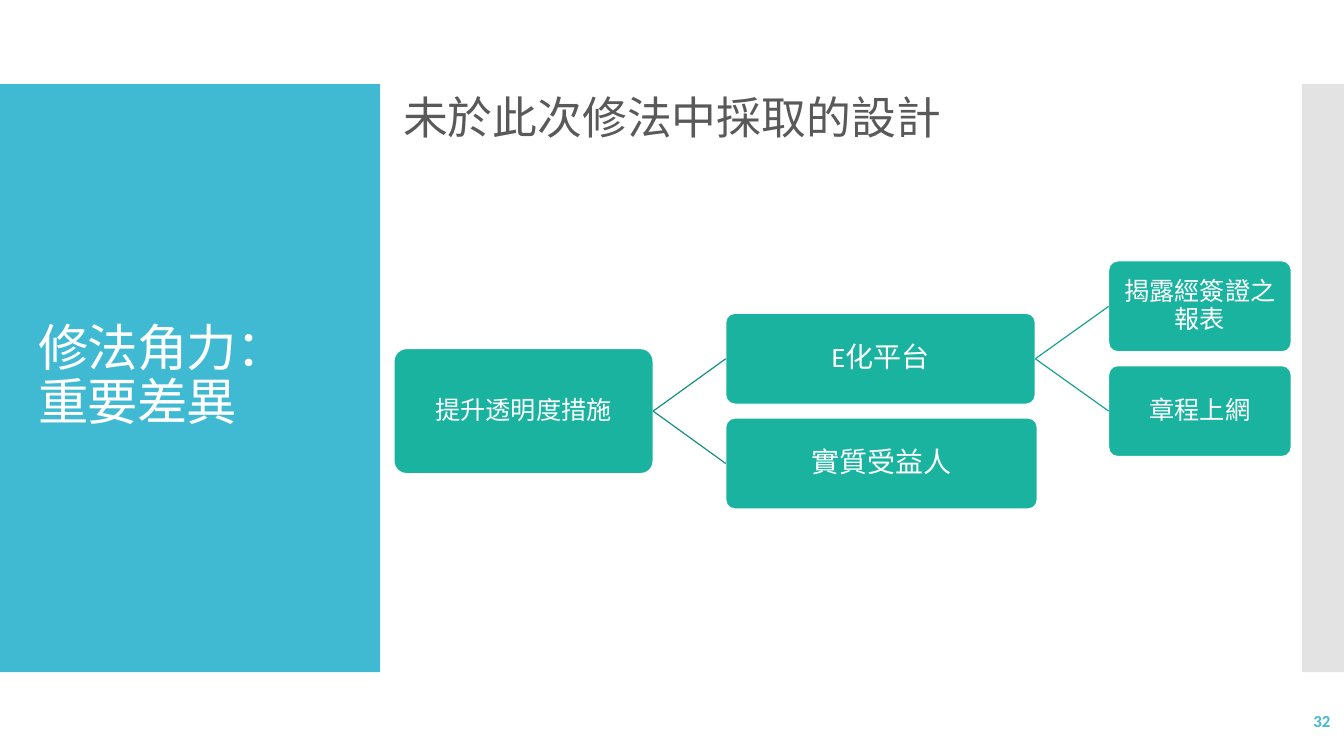
import pptx
import pptx.dml.color
import pptx.enum.shapes
import pptx.enum.text
import pptx.oxml.ns
import pptx.util
from lxml import etree

Cm, Pt = pptx.util.Cm, pptx.util.Pt
qn = pptx.oxml.ns.qn
SHAPE = pptx.enum.shapes.MSO_SHAPE
ALIGN = pptx.enum.text.PP_ALIGN
ANCHOR = pptx.enum.text.MSO_ANCHOR

COLORS = {
    "panel": "40BAD2",
    "strip": "C8C8C8",
    "node": "1AB39F",
    "root_link": "158F7F",
    "leaf_link": "18A290",
    "heading": "595959",
    "white": "FFFFFF",
}
ROW_MIDDLE = 10.36  # cm, centre line of the root node
ROW_PITCH = 2.64
NODE_HEIGHT = 2.29


def rgb(name):
    return pptx.dml.color.RGBColor.from_string(COLORS[name])


def write(sp, text, size, color="white", align=ALIGN.LEFT, bold=False,
          line_spacing=0.9, tracking=None, inset=None):
    """Fill a shape with one paragraph; \\v in the text breaks the line."""
    tf = sp.text_frame
    tf.word_wrap = True
    tf.vertical_anchor = ANCHOR.MIDDLE
    if inset is not None:
        tf.margin_left = tf.margin_right = Cm(inset)
        tf.margin_top = tf.margin_bottom = Cm(inset)
    p = tf.paragraphs[0]
    p.text = text
    p.alignment = align
    p.line_spacing = line_spacing
    for r in p.runs:
        r.font.name = "Calibri"
        r.font.size = Pt(size)
        r.font.bold = bold
        r.font.color.rgb = rgb(color)
        if tracking is not None:
            r.font._element.set("spc", str(tracking))


def add_text(s, x, y, w, h, text, size, **fmt):
    write(s.shapes.add_textbox(Cm(x), Cm(y), Cm(w), Cm(h)), text, size, **fmt)


def add_band(s, x, w, color, alpha=None):
    sp = s.shapes.add_shape(SHAPE.RECTANGLE, Cm(x), Cm(2.12), Cm(w), Cm(14.82))
    sp.shadow.inherit = False
    sp.fill.solid()
    sp.fill.fore_color.rgb = rgb(color)
    sp.line.fill.background()
    if alpha is not None:
        srgb = sp._element.spPr.find(qn("a:solidFill")).find(qn("a:srgbClr"))
        etree.SubElement(srgb, qn("a:alpha")).set("val", str(alpha * 1000))


def add_node(s, x, row, w, text, size, h=NODE_HEIGHT):
    """Add a rounded box centred on a row, counted in pitches from the root."""
    top = ROW_MIDDLE + row * ROW_PITCH - h / 2
    sp = s.shapes.add_shape(SHAPE.ROUNDED_RECTANGLE, Cm(x), Cm(top), Cm(w), Cm(h))
    sp.adjustments[0] = 0.1
    sp.shadow.inherit = False
    sp.fill.solid()
    sp.fill.fore_color.rgb = rgb("node")
    sp.line.color.rgb = rgb("white")
    sp.line.width = Pt(0.85)
    write(sp, text, size, align=ALIGN.CENTER, inset=0.03)
    return sp


def link(s, parent, child, color):
    cxn = s.shapes.add_connector(pptx.enum.shapes.MSO_CONNECTOR.STRAIGHT, 0, 0, 0, 0)
    cxn.begin_connect(parent, 3)
    cxn.end_connect(child, 1)
    cxn.line.color.rgb = rgb(color)
    cxn.line.width = Pt(0.85)
    etree.SubElement(cxn._element.spPr, qn("a:effectLst"))


def add_tree(s):
    root = add_node(s, 9.93, 0, 6.53, "提升透明度措施", 18, h=3.15)
    platform = add_node(s, 18.29, -0.5, 7.8, "E化平台", 20)
    owner = add_node(s, 18.29, 0.5, 7.85, "實質受益人", 20)
    reports = add_node(s, 27.94, -1, 4.6, "揭露經簽證之報表", 18)
    charter = add_node(s, 27.94, 0, 4.6, "章程上網", 18)
    for child in (platform, owner):
        link(s, root, child, "root_link")
    for child in (reports, charter):
        link(s, platform, child, "leaf_link")


def main():
    prs = pptx.Presentation()
    prs.slide_width, prs.slide_height = Cm(33.87), Cm(19.05)
    s = prs.slides.add_slide(prs.slide_layouts[6])
    add_band(s, 0, 9.58, "panel")
    add_band(s, 32.81, 1.06, "strip", alpha=50)
    add_text(s, 0.71, 3.12, 8.18, 12.78, "修法角力：\v重要差異", 36, tracking=-60)
    add_text(s, 9.91, 1.9, 20.32, 2.24, "未於此次修法中採取的設計", 32, color="heading")
    add_tree(s)
    add_text(s, 29.54, 17.65, 4.24, 1.02, "32", 12, color="panel",
             align=ALIGN.RIGHT, bold=True, line_spacing=1.0)
    prs.save("out.pptx")


if __name__ == "__main__":
    main()
